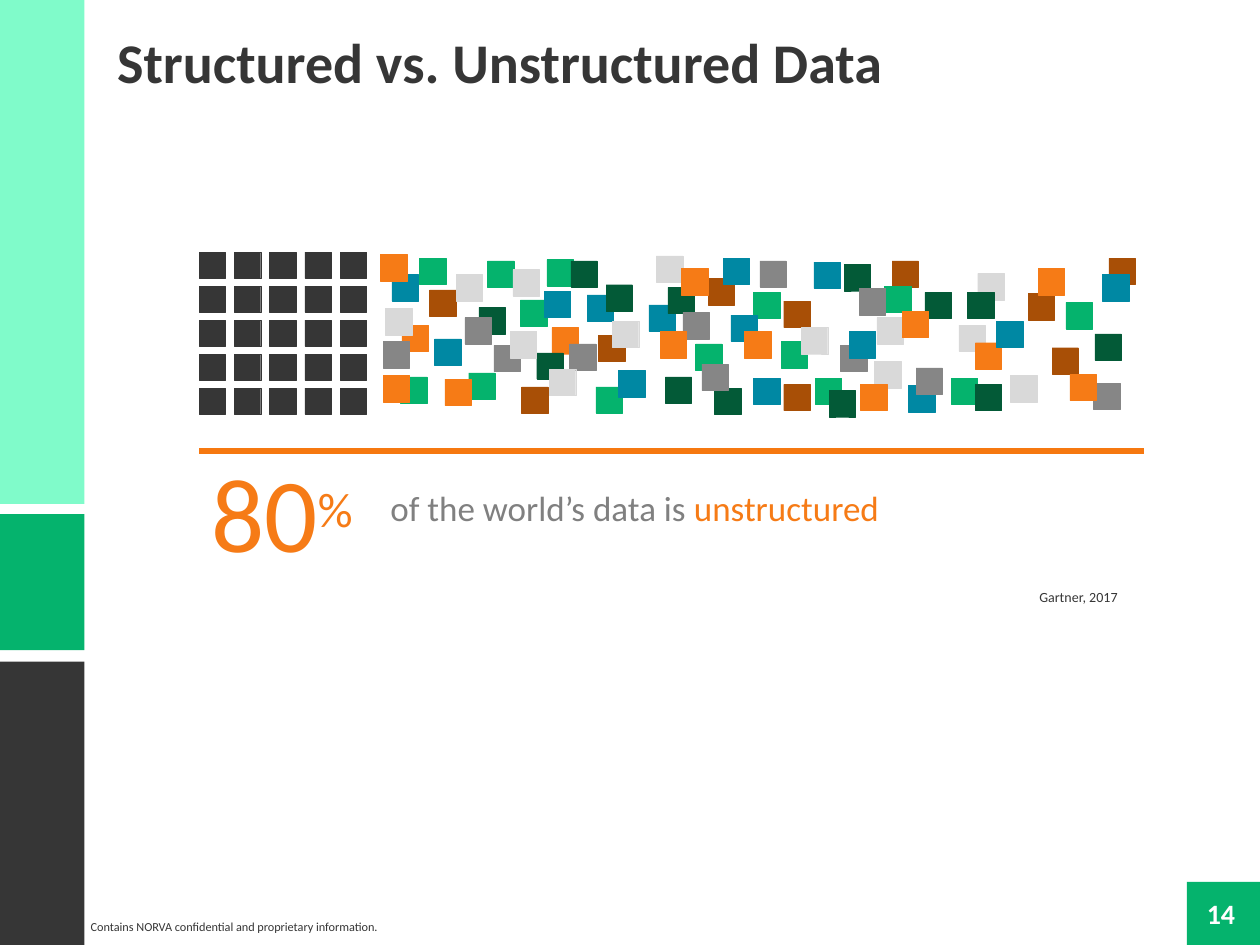
from pptx import Presentation
from pptx.dml.color import RGBColor
from pptx.enum import shapes, text
from pptx.oxml.ns import qn
from pptx.util import Pt

PX = 9144  # EMU per px, 100 px to the inch
COLORS = {
    "dark": "363636", "green": "05B36D", "mint": "80FBCA", "forest": "035A37",
    "orange": "F67B16", "rule": "F67810", "brown": "A84F06", "teal": "0088A3",
    "gray": "868686", "light": "D9D9D9", "caption": "808080", "white": "FFFFFF",
}
RGB = {name: RGBColor.from_string(value) for name, value in COLORS.items()}


def add_rect(parent, x, y, w, h, color, outlined=False):
    sp = parent.shapes.add_shape(shapes.MSO_SHAPE.RECTANGLE, x * PX, y * PX, w * PX, h * PX)
    sp.shadow.inherit = False
    sp.fill.solid()
    sp.fill.fore_color.rgb = RGB[color]
    if outlined:
        sp.line.color.rgb = RGB[color]
        sp.line.width = Pt(0.25)
    else:
        sp.line.fill.background()


def add_text(x, y, w, h, parts, side_margin=10, align=text.PP_ALIGN.LEFT):
    """Add a one-line text box; parts are (text, size, color, bold)."""
    tf = s.shapes.add_textbox(x * PX, y * PX, w * PX, h * PX).text_frame
    tf.word_wrap = True
    tf.margin_left = tf.margin_right = side_margin * PX
    tf.margin_top = tf.margin_bottom = 5 * PX
    p = tf.paragraphs[0]
    p.alignment = align
    for words, size, color, bold in parts:
        r = p.add_run()
        r.text = words
        r.font.name = "Calibri"
        r.font.size = Pt(size)
        r.font.bold = bold
        r.font.color.rgb = RGB[color]
    return p


prs = Presentation()
prs.slide_width, prs.slide_height = 1000 * PX, 750 * PX
s = prs.slides.add_slide(prs.slide_layouts[5])

# Sidebar, footer and page number
for y, h, color in [(525, 225, "dark"), (408, 108, "green"), (0, 400, "mint")]:
    add_rect(s, 0, y, 67, h, color)
add_rect(s, 942, 700, 58, 50, "green")
add_text(72, 725, 245, 22,
         [("Contains NORVA confidential and proprietary information.", 7, "dark", False)],
         side_margin=0)
add_text(942, 707, 54, 37, [("14", 16, "white", True)],
         side_margin=0, align=text.PP_ALIGN.CENTER)

# Title
title = s.shapes.title
title.left, title.top, title.width, title.height = 83 * PX, 17 * PX, 900 * PX, 64 * PX
tf = title.text_frame
tf.text = "Structured vs. Unstructured Data"
tf.auto_size = text.MSO_AUTO_SIZE.NONE
tf.vertical_anchor = text.MSO_ANCHOR.TOP
p = tf.paragraphs[0]
p.alignment = text.PP_ALIGN.LEFT
r = p.runs[0]
r.font.name = "Calibri"
r.font.size = Pt(32)
r.font.bold = True
r.font.color.rgb = RGB["dark"]

# Structured data: a regular 5 x 5 grid
SQUARE = 21
structured = s.shapes.add_group_shape()
for row in range(5):
    for col in range(5):
        add_rect(structured, 158 + 28 * col, 200 + 27 * row, SQUARE, SQUARE, "dark", True)

# Unstructured data: scattered squares, from back to front
SCATTER = [
    ("teal", [(311, 218)]),
    ("orange", [(302, 202)]),
    ("green", [(333, 205)]),
    ("brown", [(341, 230), (475, 266)]),
    ("green", [(387, 207), (434, 206), (413, 238), (318, 299), (372, 296)]),
    ("brown", [(562, 221), (622, 239), (622, 305), (414, 307), (835, 276),
               (880, 205), (816, 233), (708, 207)]),
    ("green", [(473, 307), (552, 273), (620, 271), (647, 300), (755, 300),
               (702, 227), (846, 240), (598, 232)]),
    ("orange", [(319, 258), (304, 298), (353, 301), (438, 260)]),
    ("teal", [(345, 269), (432, 231), (466, 234), (515, 242), (598, 300), (491, 294),
              (721, 306), (875, 218), (646, 208), (574, 205), (580, 250)]),
    ("forest", [(380, 244), (426, 280), (481, 226), (453, 207), (530, 228), (567, 308),
                (528, 299), (658, 310), (774, 305), (869, 265), (734, 232), (670, 210)]),
    ("gray", [(603, 207), (682, 229), (667, 274), (727, 292), (868, 304), (557, 289),
              (542, 248), (452, 273), (392, 274), (369, 252), (304, 271)]),
    ("light", [(362, 218), (407, 214), (306, 245), (436, 293), (486, 255), (521, 203),
               (405, 263), (636, 260), (696, 252), (694, 287), (761, 258), (802, 298),
               (776, 217)]),
    ("forest", [(768, 232)]),
    ("orange", [(591, 263), (774, 272), (716, 247), (849, 297), (524, 263)]),
    ("teal", [(791, 255), (674, 263)]),
    ("orange", [(541, 213), (683, 305), (824, 213)]),
]
unstructured = s.shapes.add_group_shape()
for color, spots in SCATTER:
    for x, y in spots:
        add_rect(unstructured, x, y, SQUARE, SQUARE, color, True)

# Rule and key figure
rule = s.shapes.add_connector(shapes.MSO_CONNECTOR.STRAIGHT,
                              158 * PX, 358 * PX, 908 * PX, 358 * PX)
rule.line.color.rgb = RGB["rule"]
rule.line.width = Pt(3)
sp_pr = rule._element.spPr
sp_pr.append(sp_pr.makeelement(qn("a:effectLst"), {}))

p = add_text(158, 350, 137, 111, [("80", 60, "orange", False), ("%", 48, "orange", False)])
p.runs[1].font._element.set("baseline", "30000")
add_text(300, 381, 412, 44, [("of the world’s data is ", 20, "caption", False),
                             ("unstructured", 20, "orange", False)])
add_text(815, 462, 89, 24, [("Gartner, 2017", 8, "dark", False)])

prs.save("out.pptx")
